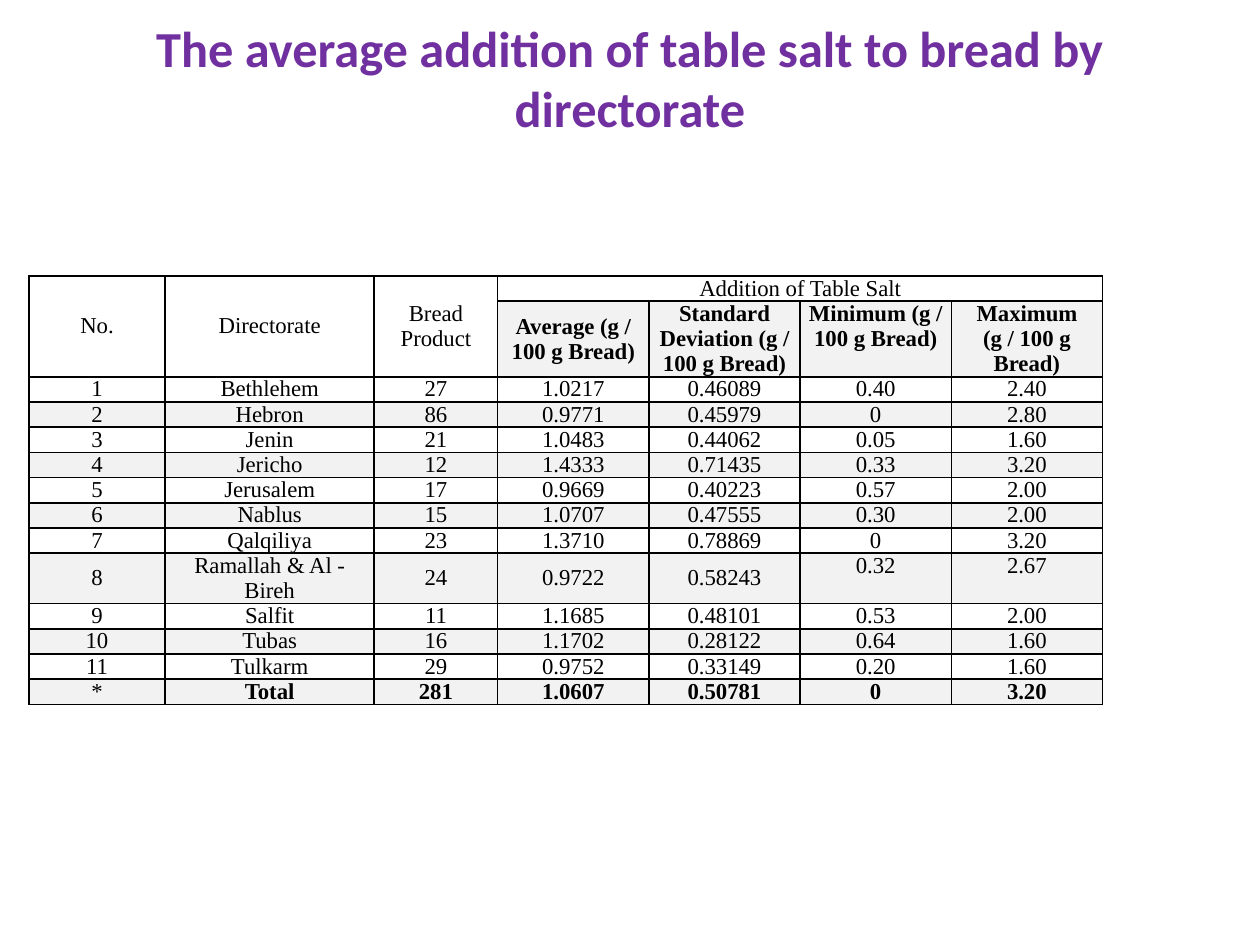
import dataclasses
import pptx
import pptx.dml.color
import pptx.enum.text
import pptx.oxml
import pptx.oxml.ns
import pptx.util

ALIGN = pptx.enum.text.PP_ALIGN
ANCHOR = pptx.enum.text.MSO_ANCHOR
WIDE, HIGH = 10, 7.5
COLS = [1.08, 1.66, 0.98] + [1.2] * 4
LINE = 0.2  # height of one line of table text
BLACK, GREY, PURPLE = "000000", "F2F2F2", "7030A0"

HEADS = ["No.", "Directorate", "Bread Product", "Addition of Table Salt"]
UNITS = [
    "Average (g / 100 g Bread)",
    "Standard Deviation (g / 100 g Bread)",
    "Minimum (g / 100 g Bread)",
    "Maximum (g / 100 g Bread)",
]


@dataclasses.dataclass
class Salt:
    num: str
    place: str
    count: str
    mean: str
    dev: str
    low: str
    high: str


DATA = [
    Salt("1", "Bethlehem", "27", "1.0217", "0.46089", "0.40", "2.40"),
    Salt("2", "Hebron", "86", "0.9771", "0.45979", "0", "2.80"),
    Salt("3", "Jenin", "21", "1.0483", "0.44062", "0.05", "1.60"),
    Salt("4", "Jericho", "12", "1.4333", "0.71435", "0.33", "3.20"),
    Salt("5", "Jerusalem", "17", "0.9669", "0.40223", "0.57", "2.00"),
    Salt("6", "Nablus", "15", "1.0707", "0.47555", "0.30", "2.00"),
    Salt("7", "Qalqiliya", "23", "1.3710", "0.78869", "0", "3.20"),
    Salt("8", "Ramallah & Al - Bireh", "24", "0.9722", "0.58243", "0.32", "2.67"),
    Salt("9", "Salfit", "11", "1.1685", "0.48101", "0.53", "2.00"),
    Salt("10", "Tubas", "16", "1.1702", "0.28122", "0.64", "1.60"),
    Salt("11", "Tulkarm", "29", "0.9752", "0.33149", "0.20", "1.60"),
    Salt("*", "Total", "281", "1.0607", "0.50781", "0", "3.20"),
]


def inch(size: float) -> int:
    return pptx.util.Inches(size)


def paint(hue: str) -> pptx.dml.color.RGBColor:
    return pptx.dml.color.RGBColor.from_string(hue)


def write(frame, text: str, *, font: str, size: float, hue: str, bold: bool = False) -> None:
    """Put one centred run of text in a frame."""
    para = frame.paragraphs[0]
    para.alignment = ALIGN.CENTER
    run = para.add_run()
    run.text = text
    run.font.name = font
    run.font.size = pptx.util.Pt(size)
    run.font.bold = bold
    run.font.color.rgb = paint(hue)


def edge(cell) -> None:
    """Draw a thin black line on each side, ahead of the cell's fill."""
    props = cell._tc.get_or_add_tcPr()
    for spot, side in enumerate(("lnL", "lnR", "lnT", "lnB")):
        line = pptx.oxml.parse_xml(
            f'<a:{side} {pptx.oxml.ns.nsdecls("a")} w="12700"><a:solidFill>'
            f'<a:srgbClr val="{BLACK}"/></a:solidFill></a:{side}>'
        )
        props.insert(spot, line)


def style(cell, row: int, col: int) -> None:
    cell.margin_left = cell.margin_right = inch(0.07)
    cell.margin_top = cell.margin_bottom = 0
    # The last two columns sit at the top of their cells
    top = row > 0 and col > 4
    cell.vertical_anchor = ANCHOR.TOP if top else ANCHOR.MIDDLE
    if row % 2 and (row > 1 or col > 2):
        cell.fill.solid()
        cell.fill.fore_color.rgb = paint(GREY)
    else:
        cell.fill.background()
    edge(cell)


def title(slide) -> None:
    box = slide.shapes.add_textbox(
        inch(0.05 * WIDE), inch(0.04 * HIGH), inch(0.9 * WIDE), inch(1.25))
    frame = box.text_frame
    frame.word_wrap = True
    frame.auto_size = pptx.enum.text.MSO_AUTO_SIZE.NONE
    frame.vertical_anchor = ANCHOR.MIDDLE
    frame.margin_bottom = inch(0.67)  # lifts the heading
    write(frame, "The average addition of table salt to bread by directorate",
          font="Calibri", size=28.8, hue=PURPLE, bold=True)


def grid(slide) -> None:
    rows = [HEADS + [""] * 3, [""] * 3 + UNITS]
    rows += [list(dataclasses.astuple(item)) for item in DATA]
    lines = {1: 3, 9: 2}  # rows taller than one line
    tall = [LINE * lines.get(row, 1) for row in range(len(rows))]
    table = slide.shapes.add_table(
        len(rows), len(COLS), inch(0.23), inch(2.19),
        inch(sum(COLS)), inch(sum(tall))).table
    table.first_row = table.horz_banding = False
    for col, width in enumerate(COLS):
        table.columns[col].width = inch(width)
    for row, height in enumerate(tall):
        table.rows[row].height = inch(height)

    # Joined heading cells
    for col in range(3):
        table.cell(0, col).merge(table.cell(1, col))
    table.cell(0, 3).merge(table.cell(0, 6))

    # Cell text and looks
    last = len(rows) - 1
    for row, texts in enumerate(rows):
        for col, text in enumerate(texts):
            cell = table.cell(row, col)
            style(cell, row, col)
            if text:
                bold = row == 1 or (row == last and col > 0)
                write(cell.text_frame, text, font="Times New Roman",
                      size=13, hue=BLACK, bold=bold)
            else:
                cell.text_frame.paragraphs[0].font.size = pptx.util.Pt(13)


def main() -> None:
    deck = pptx.Presentation()
    deck.slide_width, deck.slide_height = inch(WIDE), inch(HIGH)
    slide = deck.slides.add_slide(deck.slide_layouts[6])
    title(slide)
    grid(slide)
    deck.save("out.pptx")


if __name__ == "__main__":
    main()
